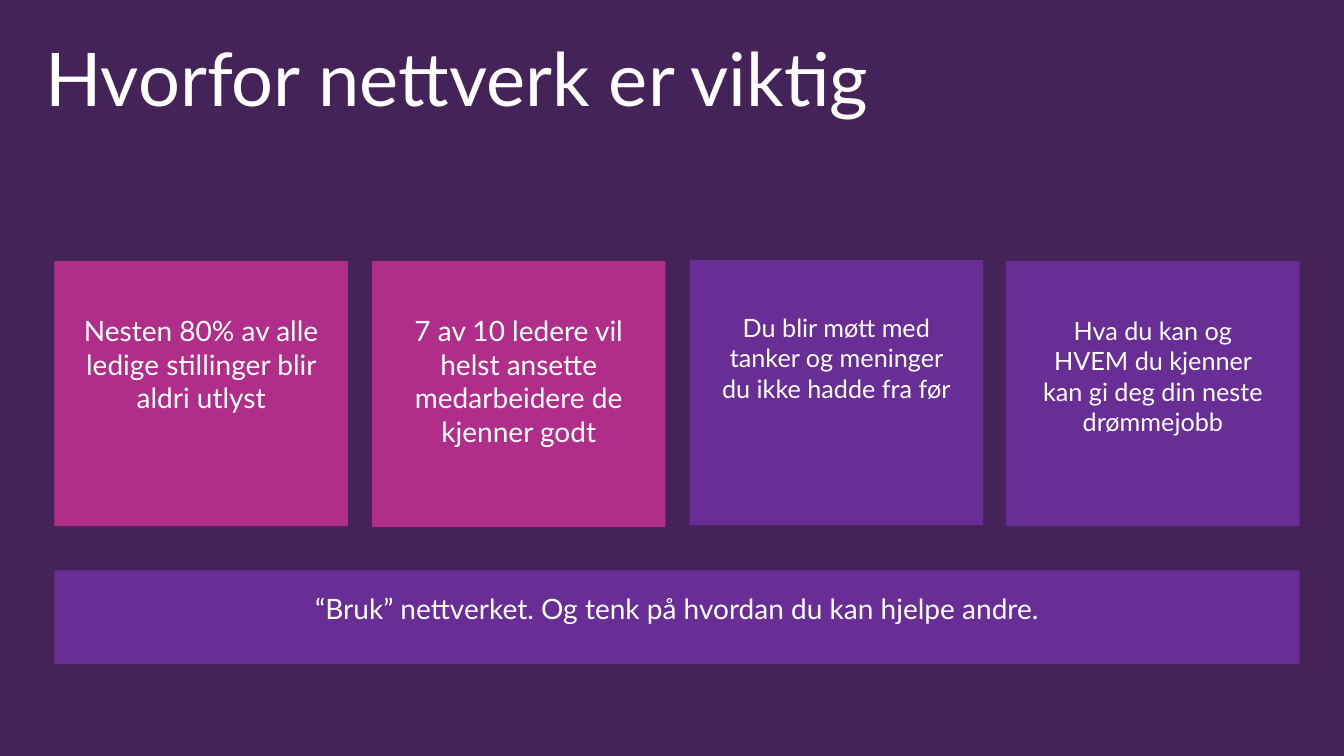
from lxml import etree
from pptx import Presentation
from pptx.dml.color import RGBColor
from pptx.enum.shapes import MSO_SHAPE as Shape
from pptx.enum.text import MSO_ANCHOR as Anchor, PP_ALIGN as Align
from pptx.oxml.ns import qn
from pptx.util import Inches, Pt

COLORS = {
    "background": "442359",
    "magenta": "C33192",
    "purple": "7030A0",
    "text": "FFFFFF",
}
FONT = "Lato"
OPACITY = "85000"


def write_text(shape, text, size, insets, alignment):
    frame = shape.text_frame
    frame.word_wrap = True
    frame.vertical_anchor = Anchor.TOP
    left, top, right, bottom = insets
    frame.margin_left, frame.margin_top = Inches(left), Inches(top)
    frame.margin_right, frame.margin_bottom = Inches(right), Inches(bottom)
    paragraph = frame.paragraphs[0]
    paragraph.text = text
    paragraph.alignment = alignment
    paragraph.font.name = FONT
    paragraph.font.size = Pt(size)
    paragraph.font.color.rgb = RGBColor.from_string(COLORS["text"])
    return paragraph


presentation = Presentation()
presentation.slide_width = Inches(13.33)
presentation.slide_height = Inches(7.5)
slide = presentation.slides.add_slide(presentation.slide_layouts[6])
slide.background.fill.solid()
slide.background.fill.fore_color.rgb = RGBColor.from_string(COLORS["background"])

title = slide.shapes.add_textbox(Inches(0.29), Inches(0.32), Inches(12.75), Inches(0.98))
heading = write_text(title, "Hvorfor nettverk er viktig", 52.9, (0.16, 0.1, 0.16, 0.1), Align.LEFT)
heading.line_spacing = 0.9

panels = [
    (0.54, 2.59, 2.91, 2.63, "magenta", 20, 0.52,
     "Nesten 80% av alle ledige stillinger blir aldri utlyst"),
    (3.69, 2.59, 2.91, 2.64, "magenta", 20, 0.52,
     "7 av 10 ledere vil helst ansette medarbeidere de kjenner godt"),
    (6.84, 2.58, 2.91, 2.63, "purple", 18, 0.52,
     "Du blir møtt med tanker og meninger du ikke hadde fra før"),
    (9.98, 2.59, 2.91, 2.63, "purple", 18, 0.54,
     "Hva du kan og HVEM du kjenner kan gi deg din neste drømmejobb"),
    (0.54, 5.66, 12.35, 0.93, "purple", 20, 0.21,
     "“Bruk” nettverket. Og tenk på hvordan du kan hjelpe andre."),
]
for left, top, width, height, color, size, top_inset, text in panels:
    panel = slide.shapes.add_shape(
        Shape.RECTANGLE, Inches(left), Inches(top), Inches(width), Inches(height))
    panel.shadow.inherit = False
    panel.line.fill.background()
    panel.fill.solid()
    panel.fill.fore_color.rgb = RGBColor.from_string(COLORS[color])
    fill_color = panel.fill._xPr.find(qn("a:solidFill"))[0]
    etree.SubElement(fill_color, qn("a:alpha")).set("val", OPACITY)
    write_text(panel, text, size, (0.27, top_inset, 0.27, 0.21), Align.CENTER)

presentation.save("out.pptx")
